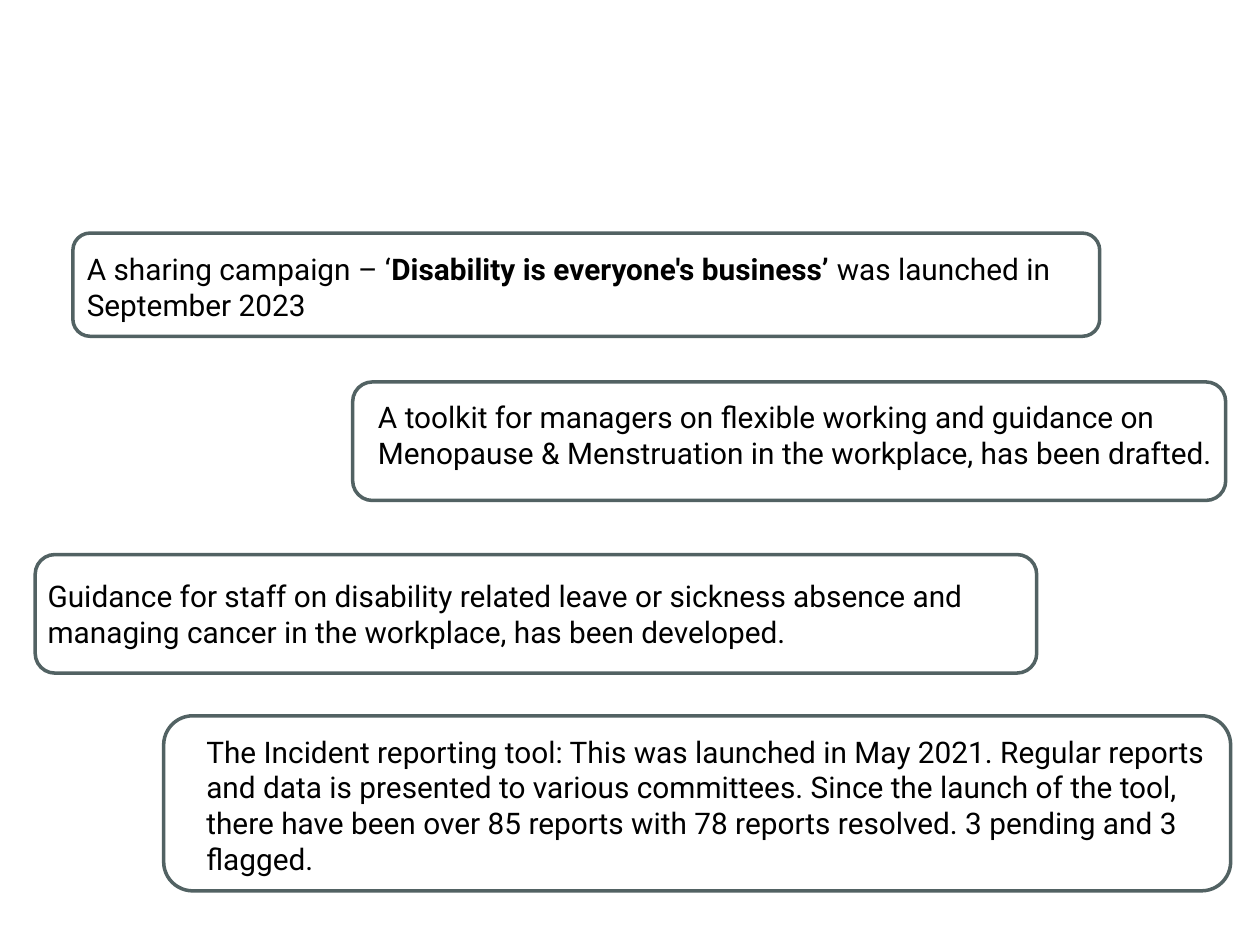
from pptx import Presentation
from pptx.dml.color import RGBColor
from pptx.enum.shapes import MSO_SHAPE as Shape
from pptx.enum.text import MSO_AUTO_SIZE as AutoSize
from pptx.util import Cm, Pt

BLACK = RGBColor(0x00, 0x00, 0x00)
SLATE = RGBColor(0x52, 0x62, 0x63)

ACHIEVEMENTS = [
    ((1.5, 4.93, 21.59, 1.7), (1.47, 4.7, 20.7, 2.08),
     [("A sharing campaign – ‘", False),
      ("Disability is everyone's business’ ", True),
      ("was launched in September 2023", False)]),
    ((7.37, 7.92, 18.59, 1.7), (7.11, 7.7, 17.6, 2.39),
     [("A toolkit for managers on flexible working and guidance on "
       "Menopause & Menstruation in the workplace, has been drafted.", False)]),
    ((0.71, 11.53, 21.49, 1.7), (0.71, 11.18, 20.19, 2.39),
     [("Guidance for staff on disability related leave or sickness absence "
       "and managing cancer in the workplace, has been developed.", False)]),
    ((3.91, 14.66, 20.7, 3.18), (3.3, 14.43, 21.51, 3.53),
     [("The Incident reporting tool: This was launched in May 2021. Regular "
       "reports and data is presented to various committees. Since the launch "
       "of the tool, there have been over 85 reports with 78 reports resolved. "
       "3 pending and 3 flagged.", False)]),
]


def add_statement(slide, area, phrases):
    statement = slide.shapes.add_textbox(*map(Cm, area)).text_frame
    statement.word_wrap = True
    statement.auto_size = AutoSize.SHAPE_TO_FIT_TEXT
    for words, bold in phrases:
        phrase = statement.paragraphs[0].add_run()
        phrase.text = words
        phrase.font.name = "Roboto"
        phrase.font.size = Pt(17)
        phrase.font.bold = bold
        phrase.font.color.rgb = BLACK


def add_frame(slide, area):
    frame = slide.shapes.add_shape(Shape.ROUNDED_RECTANGLE, *map(Cm, area))
    frame.shadow.inherit = False
    frame.fill.background()
    frame.line.color.rgb = SLATE
    frame.line.width = Pt(2)


def main():
    deck = Presentation()
    deck.slide_width = Cm(25.4)
    deck.slide_height = Cm(19.05)
    slide = deck.slides.add_slide(deck.slide_layouts[6])
    for text_area, frame_area, phrases in ACHIEVEMENTS:
        add_statement(slide, text_area, phrases)
        add_frame(slide, frame_area)
    deck.save("out.pptx")


if __name__ == "__main__":
    main()
